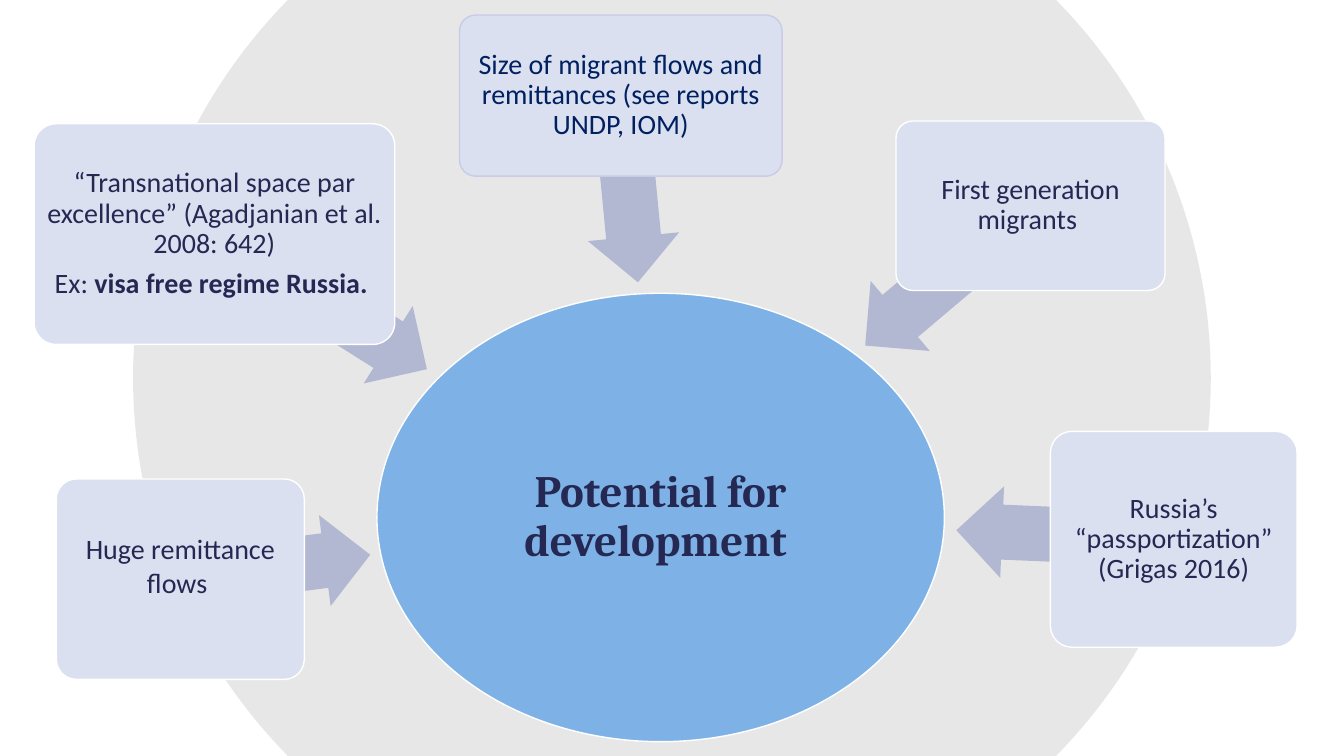
from math import acos, asin, cos, pi, sin

from lxml.etree import SubElement
from pptx import Presentation
from pptx.dml.color import RGBColor
from pptx.enum.shapes import MSO_SHAPE
from pptx.enum.text import MSO_ANCHOR, PP_ALIGN
from pptx.oxml.ns import qn
from pptx.util import Cm, Pt

WIDE, HIGH = 33.87, 19.05
HEX = {
    "disc": "D9D9D9",
    "hub": "7EB2E6",
    "arrow": "B2B8D2",
    "card": "DAE0EF",
    "white": "FFFFFF",
    "lilac": "C9CBE7",
    "ink": "242852",
    "navy": "002060",
}


def color(name):
    return RGBColor.from_string(HEX[name])


def paint(shape, fill, line=None):
    shape.shadow.inherit = False
    shape.fill.solid()
    shape.fill.fore_color.rgb = color(fill)
    if line:
        shape.line.color.rgb = color(line)
        shape.line.width = Pt(1)
    else:
        shape.line.fill.background()


def add_disc(slide, radius=13.58):
    """Draw a pale circle, cut off by the top and bottom of the slide."""
    mid_x, mid_y = WIDE / 2, HIGH / 2
    half = asin(mid_y / radius)
    steps = 60
    turns = [half * (2 * i / steps - 1) for i in range(steps + 1)]
    turns += [pi + turn for turn in turns]
    dots = [(Cm(mid_x + radius * cos(t)), Cm(mid_y + radius * sin(t)))
            for t in turns]
    outline = slide.shapes.build_freeform(*dots[0])
    outline.add_line_segments(dots[1:], close=True)
    disc = outline.convert_to_shape()
    paint(disc, "disc")
    tint = disc.fill._xPr.find(qn("a:solidFill"))[0]
    SubElement(tint, qn("a:alpha")).set("val", "62000")


def add_text(shape, paras, size, font, ink, inset, spacing=0.9, foot=0):
    """Fill a shape with paragraphs, each a list of (text, bold) runs."""
    frame = shape.text_frame
    frame.word_wrap = True
    frame.vertical_anchor = MSO_ANCHOR.MIDDLE
    frame.margin_left = frame.margin_right = frame.margin_top = Cm(inset)
    frame.margin_bottom = Cm(inset + foot)
    for i, runs in enumerate(paras):
        para = frame.add_paragraph() if i else frame.paragraphs[0]
        para.alignment = PP_ALIGN.CENTER
        para.line_spacing = spacing
        para.space_after = Pt(size * 0.35)
        for text, bold in runs:
            run = para.add_run()
            run.text = text
            run.font.size = Pt(size)
            run.font.name = font
            run.font.bold = bold
            run.font.color.rgb = color(ink)


def add_hub(slide, text):
    hub = slide.shapes.add_shape(
        MSO_SHAPE.OVAL, Cm(9.5), Cm(7.39), Cm(14.3), Cm(11.3))
    paint(hub, "hub", "white")
    add_text(hub, [[(text, True)]], 32, "Cambria", "ink", 0.05)


def add_arrow(slide, left, top, width, turn):
    arrow = slide.shapes.add_shape(
        MSO_SHAPE.LEFT_ARROW, Cm(left), Cm(top), Cm(width), Cm(2.31))
    arrow.adjustments[0] = 0.6
    arrow.adjustments[1] = 0.5
    arrow.rotation = turn
    paint(arrow, "arrow")


def add_card(slide, box, paras, line="white", ink="ink", **layout):
    card = slide.shapes.add_shape(
        MSO_SHAPE.ROUNDED_RECTANGLE, *[Cm(side) for side in box])
    card.adjustments[0] = 0.1
    paint(card, "card", line)
    add_text(card, paras, 20, "Calibri", ink, 0.1, **layout)


def main():
    deck = Presentation()
    deck.slide_width, deck.slide_height = Cm(WIDE), Cm(HIGH)
    slide = deck.slides.add_slide(deck.slide_layouts[6])

    add_disc(slide)
    add_hub(slide, "Potential for development ")

    add_arrow(slide, 4.52, 13.13, 4.83, 172.7)
    add_card(slide, (1.42, 12.07, 6.25, 5.05),
             [[("Huge remittance flows ", False)]], spacing=1.0, foot=0.7)

    add_arrow(slide, 4.9, 6.45, 6.35, 212.3)
    add_card(slide, (0.86, 3.12, 9.09, 5.56), [
        [("“Transnational space par excellence” "
          "(Agadjanian et al. 2008: 642)", False)],
        [("Ex: ", False), ("visa free regime Russia. ", True)],
    ])

    add_arrow(slide, 13.49, 3.61, 4.72, 264.5)
    add_card(slide, (11.58, 0.38, 8.13, 4.06),
             [[("Size of migrant flows and remittances "
                "(see reports UNDP, IOM)", False)]],
             line="lilac", ink="navy")

    add_arrow(slide, 21.16, 5.79, 5.46, 319.8)
    add_card(slide, (22.58, 3.05, 6.78, 4.27),
             [[("First generation migrants ", False)]])

    add_arrow(slide, 24.1, 12.32, 5.46, 2.4)
    add_card(slide, (26.47, 10.87, 6.22, 5.44),
             [[("Russia’s “passportization” (Grigas 2016)", False)]])

    deck.save("out.pptx")


if __name__ == "__main__":
    main()
